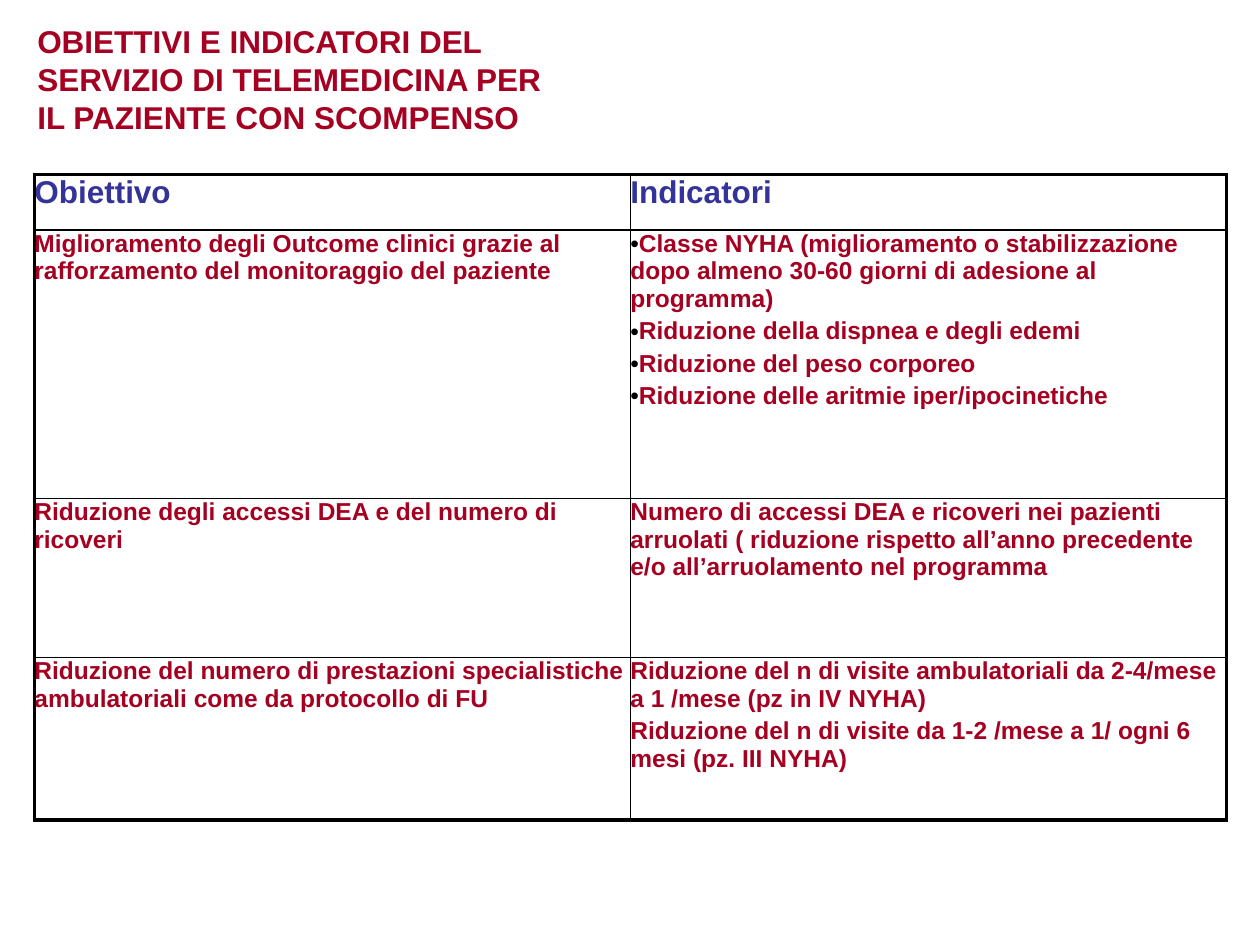
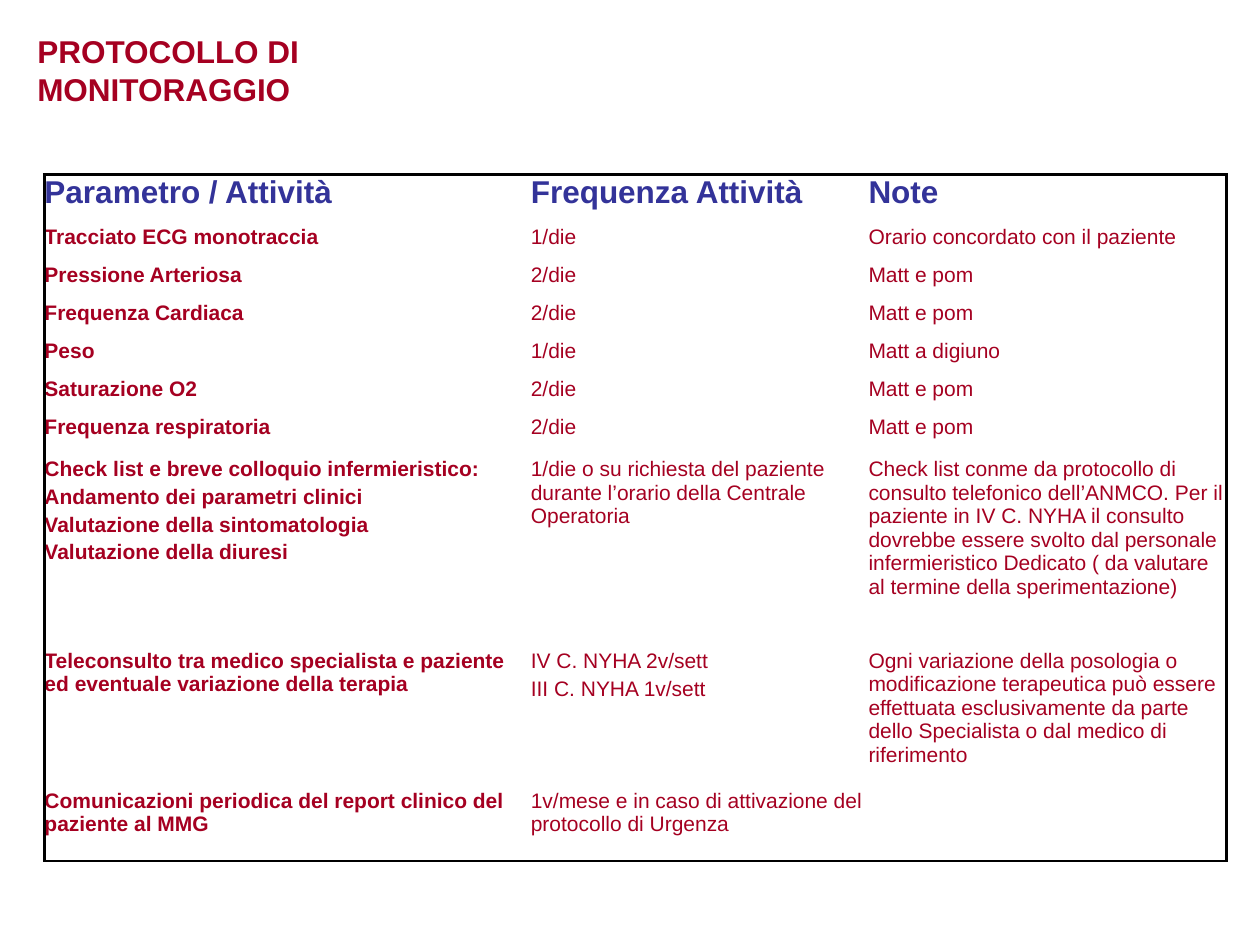
from dataclasses import dataclass

from lxml import etree
from pptx import Presentation
from pptx.dml.color import RGBColor
from pptx.enum.text import MSO_ANCHOR, MSO_AUTO_SIZE, PP_ALIGN
from pptx.oxml.ns import qn
from pptx.util import Inches, Pt

# Shared look
RED = RGBColor(0xA5, 0x00, 0x21)
BLUE = RGBColor(0x33, 0x33, 0x99)
BLACK = RGBColor(0x00, 0x00, 0x00)
FONT = "Arial"
MIDDLE, LEFT, FIXED = MSO_ANCHOR.MIDDLE, PP_ALIGN.LEFT, MSO_AUTO_SIZE.NONE
TITLE_ONLY = 5
HEAD, THICK, THIN, NONE = 18, 2.25, 1, 0
BULLET = "•"

# The slide is a grid of 100 columns by 75 rows
WIDTH, HEIGHT = Inches(10), Inches(7.5)
COL, ROW = WIDTH / 100, HEIGHT / 75
TITLE_X, TITLE_W, GRID_Y = 1.96, 43.3, 13.87


@dataclass(frozen=True)
class Page:
    title: str
    top: float            # title, in rows
    tall: float
    left: float           # table, in columns
    cols: list[float]
    rows: list[float]
    size: int             # body text
    bold: int             # number of bold columns
    inner: float          # line widths
    base: float
    cells: list[list[str]]


PAGES = [
    Page(
        "OBIETTIVI E INDICATORI DEL SERVIZIO DI TELEMEDICINA PER "
        "IL PAZIENTE CON SCOMPENSO",
        1.25, 10, 2.73, [47.3] * 2, [4.4, 21.3, 12.6, 12.9],
        14, 2, THIN, THICK,
        [
            ["Obiettivo", "Indicatori"],
            ["Miglioramento degli Outcome clinici grazie al "
             "rafforzamento del monitoraggio del paziente",
             "•Classe NYHA (miglioramento o stabilizzazione dopo almeno "
             "30-60 giorni di adesione al programma)\n"
             "•Riduzione della dispnea e degli edemi\n"
             "•Riduzione del peso corporeo\n"
             "•Riduzione delle aritmie iper/ipocinetiche"],
            ["Riduzione degli accessi DEA e del numero di ricoveri",
             "Numero di accessi DEA e ricoveri nei pazienti arruolati "
             "( riduzione rispetto all’anno precedente e/o "
             "all’arruolamento nel programma"],
            ["Riduzione del numero di prestazioni specialistiche "
             "ambulatoriali come da protocollo di FU",
             "Riduzione del n di visite ambulatoriali da 2-4/mese "
             "a 1 /mese (pz in IV NYHA)\n"
             "Riduzione del n di visite da 1-2 /mese a 1/ ogni 6 mesi "
             "(pz. III NYHA)"],
        ],
    ),
    Page(
        "PROTOCOLLO DI MONITORAGGIO",
        2.05, 7, 3.53, [38.6, 26.8, 28.4],
        [4] + [3.02] * 5 + [3.34, 15.23, 11.1, 5.7],
        12, 1, NONE, THIN,
        [
            ["Parametro / Attività", "Frequenza Attività", "Note"],
            ["Tracciato ECG monotraccia", "1/die",
             "Orario concordato con il paziente"],
            ["Pressione Arteriosa", "2/die", "Matt e pom"],
            ["Frequenza Cardiaca", "2/die", "Matt e pom"],
            ["Peso", "1/die", "Matt a digiuno"],
            ["Saturazione O2", "2/die", "Matt e pom"],
            ["Frequenza respiratoria", "2/die", "Matt e pom"],
            ["Check list e breve colloquio infermieristico:\n"
             "Andamento dei parametri clinici\n"
             "Valutazione della sintomatologia\n"
             "Valutazione della diuresi",
             "1/die o su richiesta del paziente durante l’orario della "
             "Centrale Operatoria",
             "Check list conme da protocollo di consulto telefonico "
             "dell’ANMCO. Per il paziente in IV C. NYHA il consulto "
             "dovrebbe essere svolto dal personale infermieristico "
             "Dedicato ( da valutare al termine della sperimentazione)"],
            ["Teleconsulto tra medico specialista e paziente ed eventuale "
             "variazione della terapia",
             "IV C. NYHA 2v/sett\nIII C. NYHA 1v/sett",
             "Ogni variazione della posologia o modificazione terapeutica "
             "può essere effettuata esclusivamente da parte dello "
             "Specialista o dal medico di riferimento"],
            ["Comunicazioni periodica del report clinico del paziente "
             "al MMG",
             "1v/mese e in caso di attivazione del protocollo di Urgenza",
             ""],
        ],
    ),
]


def style(para, size: int, color: RGBColor, bold: bool) -> None:
    for run in para.runs:
        font = run.font
        font.name, font.size, font.bold = FONT, Pt(size), bold
        font.color.rgb = color


def add_dot(para) -> None:
    """Black bullet directly before the text, without indent."""
    props = para._p.get_or_add_pPr()
    props.set("marL", "0")
    props.set("indent", "0")
    tint = etree.SubElement(props, qn("a:buClr"))
    etree.SubElement(tint, qn("a:srgbClr"), val=str(BLACK))
    etree.SubElement(props, qn("a:buSzPct"), val="101000")
    etree.SubElement(props, qn("a:buFont"), typeface=FONT)
    etree.SubElement(props, qn("a:buChar"), char=BULLET)


def add_edge(cell, side: str, width: float) -> None:
    line = etree.SubElement(cell._tc.get_or_add_tcPr(), qn(f"a:ln{side}"))
    if not width:
        etree.SubElement(line, qn("a:noFill"))
        return
    line.set("w", str(Pt(width)))
    fill = etree.SubElement(line, qn("a:solidFill"))
    etree.SubElement(fill, qn("a:srgbClr"), val=str(BLACK))


def add_title(slide, page: Page) -> None:
    title = slide.shapes.title
    title.left, title.top = int(TITLE_X * COL), int(page.top * ROW)
    title.width, title.height = int(TITLE_W * COL), int(page.tall * ROW)
    frame = title.text_frame
    frame.text = page.title
    frame.word_wrap, frame.auto_size = True, FIXED
    frame.vertical_anchor = MIDDLE
    para = frame.paragraphs[0]
    para.alignment = LEFT
    style(para, HEAD, RED, True)


def fill_cell(cell, text: str, size: int, color: RGBColor,
              bold: bool) -> None:
    cell.margin_left = cell.margin_right = 0
    cell.margin_top = cell.margin_bottom = 0
    cell.text_frame.text = text.replace(BULLET, "")
    paras = cell.text_frame.paragraphs
    for i, (para, part) in enumerate(zip(paras, text.split("\n"))):
        if i:
            para.space_before = Pt(size * 0.2)
        if part.startswith(BULLET):
            add_dot(para)
        style(para, size, color, bold)


def add_grid(slide, page: Page) -> None:
    rows, cols = len(page.rows), len(page.cols)
    table = slide.shapes.add_table(
        rows, cols, int(page.left * COL), int(GRID_Y * ROW),
        int(sum(page.cols) * COL), int(sum(page.rows) * ROW)).table
    table.first_row = table.horz_banding = False
    for column, wide in zip(table.columns, page.cols):
        column.width = int(wide * COL)
    for row, tall in zip(table.rows, page.rows):
        row.height = int(tall * ROW)
    for r, texts in enumerate(page.cells):
        for c, text in enumerate(texts):
            cell = table.cell(r, c)
            if r == 0:
                fill_cell(cell, text, HEAD, BLUE, True)
            else:
                fill_cell(cell, text, page.size, RED, c < page.bold)
            # Heavy frame outside, page's own line inside
            add_edge(cell, "L", page.inner if c else THICK)
            add_edge(cell, "R", page.inner if c < cols - 1 else THICK)
            add_edge(cell, "T", page.inner if r else THICK)
            add_edge(cell, "B", page.inner if r < rows - 1 else page.base)
            cell.fill.background()


def main() -> None:
    deck = Presentation()
    deck.slide_width, deck.slide_height = WIDTH, HEIGHT
    for page in PAGES:
        slide = deck.slides.add_slide(deck.slide_layouts[TITLE_ONLY])
        add_title(slide, page)
        add_grid(slide, page)
    deck.save("out.pptx")


if __name__ == "__main__":
    main()
